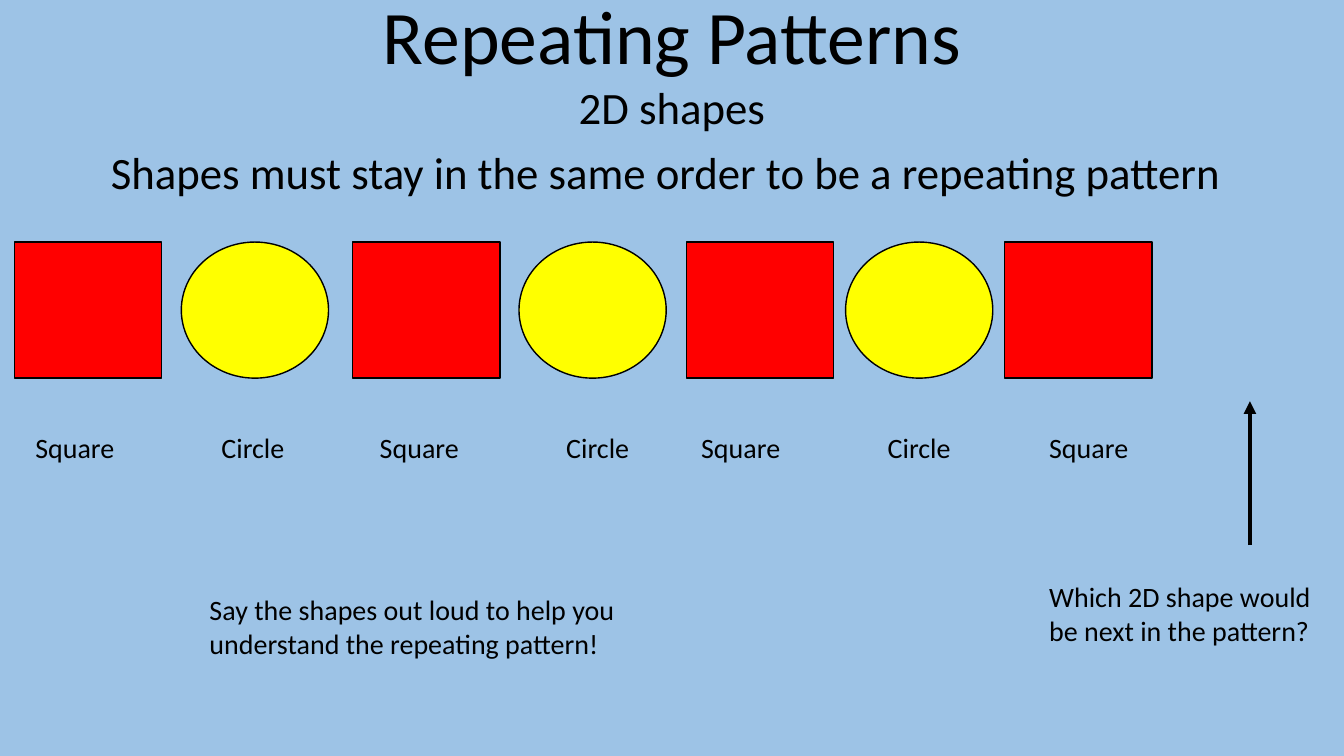
from lxml import etree
from pptx import Presentation
from pptx.dml.color import RGBColor
from pptx.enum import shapes, text
from pptx.oxml import ns
from pptx.util import Cm, Pt

SKY = RGBColor(0x9D, 0xC3, 0xE6)
RED = RGBColor(0xFF, 0x00, 0x00)
YELLOW = RGBColor(0xFF, 0xFF, 0x00)
BLACK = RGBColor(0x00, 0x00, 0x00)
FONT = "Calibri"

KINDS = {
    "Square": (shapes.MSO_SHAPE.RECTANGLE, RED),
    "Circle": (shapes.MSO_SHAPE.OVAL, YELLOW),
}
# Name, shape offset and label offset along the row, in cm
PATTERN = [
    ("Square", 0, 0.28),
    ("Circle", 4.21, 4.97),
    ("Square", 8.53, 8.96),
    ("Circle", 12.72, 13.66),
    ("Square", 16.94, 17.06),
    ("Circle", 20.95, 21.76),
    ("Square", 24.96, 25.83),
]


def add_text(slide, words, left, top, width, height, size=20,
             align=text.PP_ALIGN.LEFT, wrap=True):
    box = slide.shapes.add_textbox(Cm(left), Cm(top), Cm(width), Cm(height))
    frame = box.text_frame
    frame.word_wrap = wrap
    frame.auto_size = text.MSO_AUTO_SIZE.SHAPE_TO_FIT_TEXT
    paragraph = frame.paragraphs[0]
    paragraph.alignment = align
    run = paragraph.add_run()
    run.text = words
    run.font.name = FONT
    run.font.size = Pt(size)
    run.font.color.rgb = BLACK


def add_headings(slide, left, top, width):
    centre = text.PP_ALIGN.CENTER
    title_width = 15.29
    add_text(slide, "Repeating Patterns", left + (width - title_width) / 2, top,
             title_width, 2.57, size=54, align=centre, wrap=False)
    add_text(slide, "2D shapes", left, top + 2.29, width, 1.63,
             size=32, align=centre)
    add_text(slide, "Shapes must stay in the same order to be a repeating pattern",
             left - 0.15, top + 3.92, width, 1.63, size=32, align=centre)


def add_pattern(slide, left, top, width, height):
    for name, shape_offset, label_offset in PATTERN:
        preset, colour = KINDS[name]
        item = slide.shapes.add_shape(preset, Cm(left + shape_offset), Cm(top),
                                      Cm(width), Cm(height))
        item.shadow.inherit = False
        item.fill.solid()
        item.fill.fore_color.rgb = colour
        item.line.color.rgb = BLACK
        item.line.width = Pt(1)
        add_text(slide, name, left + label_offset, top + 4.62, 2.9, 1.11)


def add_question(slide, left, top, width):
    # Arrow pointing up at the empty place in the row
    arrow_x = Cm(left + 5.31)
    arrow = slide.shapes.add_connector(shapes.MSO_CONNECTOR.STRAIGHT, arrow_x,
                                       Cm(top + 3.63), arrow_x, Cm(top))
    arrow.line.color.rgb = BLACK
    arrow.line.width = Pt(3)
    line = arrow.line._get_or_add_ln()
    etree.SubElement(line, ns.qn("a:tailEnd"), type="triangle")
    etree.SubElement(arrow._element.spPr, ns.qn("a:effectLst"))
    add_text(slide, "Which 2D shape would be next in the pattern?",
             left, top + 4.37, width, 1.96)


def main():
    deck = Presentation()
    deck.slide_width, deck.slide_height = Cm(33.87), Cm(19.05)
    slide = deck.slides.add_slide(deck.slide_layouts[6])
    slide.background.fill.solid()
    slide.background.fill.fore_color.rgb = SKY

    add_headings(slide, 0, -0.41, 33.87)
    add_pattern(slide, 0.36, 6.1, 3.71, 3.43)
    add_question(slide, 26.19, 10.11, 7.95)
    # Hint below the row
    add_text(slide, "Say the shapes out loud to help you understand "
             "the repeating pattern!", 5.03, 14.81, 12.7, 1.96)
    deck.save("out.pptx")


if __name__ == "__main__":
    main()
